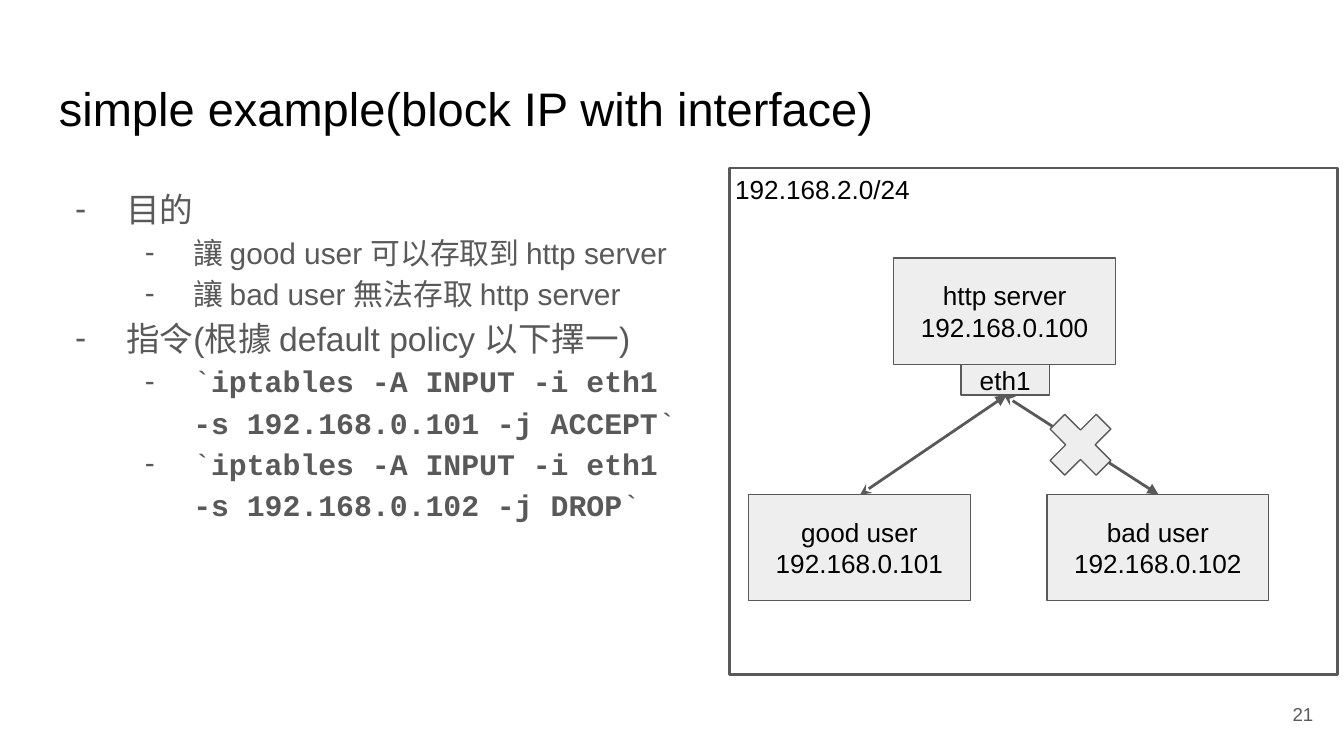
from lxml import etree
from pptx import Presentation
from pptx.dml.color import RGBColor
from pptx.enum.shapes import MSO_CONNECTOR, MSO_SHAPE
from pptx.enum.text import MSO_ANCHOR, PP_ALIGN
from pptx.oxml.ns import qn
from pptx.util import Inches, Pt

RECTANGLE = MSO_SHAPE.RECTANGLE
CROSS = MSO_SHAPE.MATH_MULTIPLY
STRAIGHT = MSO_CONNECTOR.STRAIGHT
TOP, MIDDLE = MSO_ANCHOR.TOP, MSO_ANCHOR.MIDDLE
LEFT, CENTER, RIGHT = PP_ALIGN.LEFT, PP_ALIGN.CENTER, PP_ALIGN.RIGHT

COLORS = {"black": "000000", "gray": "595959", "light": "EEEEEE"}
SANS, MONO = "Arial", "Courier New"
BOX_WIDTH, BOX_HEIGHT = 1.65, 0.79


def color(name):
    return RGBColor.from_string(COLORS[name])


class SlideBuilder:
    def __init__(self, slide):
        self.slide = slide

    def format_run(self, run, size, color_name, font=SANS, bold=False):
        run.font.name = font
        run.font.size = Pt(size)
        run.font.bold = bold
        run.font.color.rgb = color(color_name)

    def fill_text(self, shape, text, size, color_name, align, anchor, inset=0.1):
        frame = shape.text_frame
        frame.word_wrap = True
        frame.vertical_anchor = anchor
        frame.margin_left = frame.margin_top = Inches(inset)
        frame.margin_right = frame.margin_bottom = Inches(0.1)
        frame.text = text
        for paragraph in frame.paragraphs:
            paragraph.alignment = align
            for run in paragraph.runs:
                self.format_run(run, size, color_name)

    def text(self, position, text, size, color_name="black", align=LEFT, anchor=TOP, inset=0.1):
        shape = self.slide.shapes.add_textbox(*map(Inches, position))
        self.fill_text(shape, text, size, color_name, align, anchor, inset)

    def bullets(self, position, items):
        shape = self.slide.shapes.add_textbox(*map(Inches, position))
        frame = shape.text_frame
        frame.word_wrap = True
        frame.margin_left = frame.margin_right = Inches(0.1)
        frame.margin_top = frame.margin_bottom = Inches(0.1)
        for index, (level, font, parts) in enumerate(items):
            paragraph = frame.add_paragraph() if index else frame.paragraphs[0]
            paragraph.level = level
            paragraph.line_spacing = 1.15
            properties = paragraph._p.get_or_add_pPr()
            properties.set("marL", str(Inches(0.5 * (level + 1))))
            properties.set("indent", str(Inches((-0.38, -0.36)[level])))
            bullet_color = etree.SubElement(properties, qn("a:buClr"))
            etree.SubElement(bullet_color, qn("a:srgbClr"), val=COLORS["gray"])
            etree.SubElement(properties, qn("a:buFont"), typeface=SANS)
            etree.SubElement(properties, qn("a:buChar"), char="-")
            for part_index, part in enumerate(parts):
                run = paragraph.add_run()
                run.text = part
                self.format_run(run, (18, 16)[level], "gray", font, part_index == 1)

    def shape(self, kind, position, text="", fill="light", line_width=0.75):
        shape = self.slide.shapes.add_shape(kind, *map(Inches, position))
        shape.shadow.inherit = False
        if fill:
            shape.fill.solid()
            shape.fill.fore_color.rgb = color(fill)
        else:
            shape.fill.background()
        shape.line.color.rgb = color("gray")
        shape.line.width = Pt(line_width)
        if text:
            self.fill_text(shape, text, 14, "black", CENTER, MIDDLE)
        return shape

    def arrow(self, start, end):
        connector = self.slide.shapes.add_connector(STRAIGHT, *map(Inches, start + end))
        connector.line.color.rgb = color("gray")
        connector.line.width = Pt(1.5)
        line = connector.line._get_or_add_ln()
        etree.SubElement(line, qn("a:headEnd"), type="stealth")
        etree.SubElement(line, qn("a:tailEnd"), type="triangle")
        etree.SubElement(connector._element.spPr, qn("a:effectLst"))


def main():
    presentation = Presentation()
    presentation.slide_width = Inches(10)
    presentation.slide_height = Inches(10 * 9 / 16)
    builder = SlideBuilder(presentation.slides.add_slide(presentation.slide_layouts[6]))

    builder.text((0.34, 0.49, 9.32, 0.63), "simple example(block IP with interface)", 25.2)
    command = "iptables -A INPUT -i eth1 -s 192.168.0."
    builder.bullets((0.34, 1.26, 4.94, 3.74), [
        (0, SANS, ["目的"]),
        (1, SANS, ["讓 good user 可以存取到 http server"]),
        (1, SANS, ["讓 bad user 無法存取 http server"]),
        (0, SANS, ["指令(根據 default policy 以下擇一)"]),
        (1, MONO, ["`", command + "101 -j ACCEPT", "`"]),
        (1, MONO, ["`", command + "102 -j DROP", "`"]),
    ])
    builder.text((9.27, 5.1, 0.6, 0.43), "21", 10, "gray", RIGHT, MIDDLE)

    builder.shape(RECTANGLE, (5.43, 1.25, 4.52, 3.77), fill=None, line_width=1.5)
    builder.shape(RECTANGLE, (7.15, 2.71, 0.66, 0.23), "eth1")
    for left, top, name, host in (
        (6.65, 1.92, "http server", 100),
        (5.57, 3.68, "good user", 101),
        (7.79, 3.68, "bad user", 102),
    ):
        builder.shape(RECTANGLE, (left, top, BOX_WIDTH, BOX_HEIGHT), f"{name}\n192.168.0.{host}")
    builder.arrow((6.4, 3.68), (7.49, 2.94))
    builder.arrow((7.47, 2.94), (8.62, 3.68))
    cross = builder.shape(CROSS, (7.71, 2.98, 0.66, 0.66))
    cross.adjustments[0] = 0.235
    builder.text((5.43, 1.25, 1.61, 0.38), "192.168.2.0/24", 14, inset=0.04)

    presentation.save("out.pptx")


if __name__ == "__main__":
    main()
